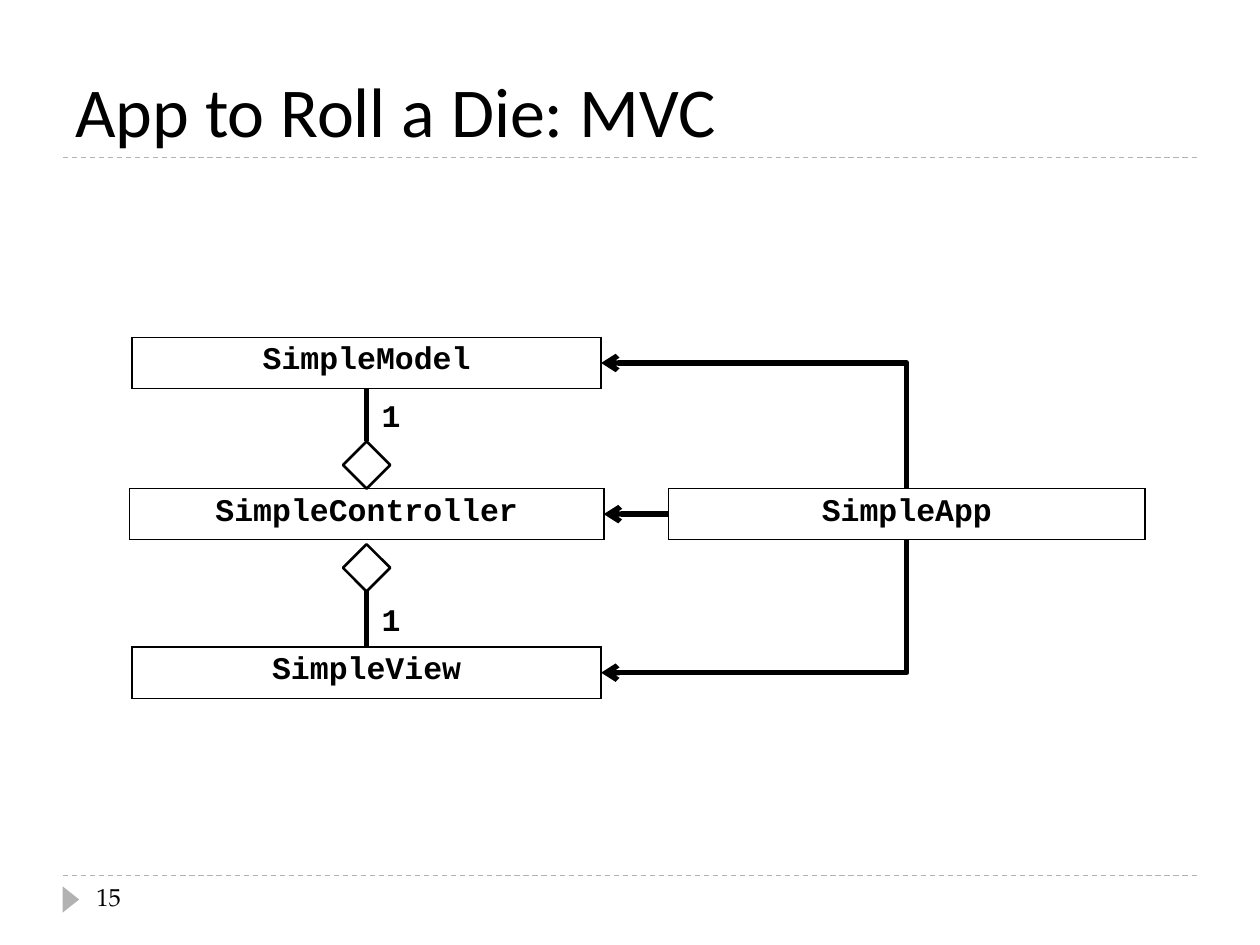
import dataclasses

import pptx
import pptx.dml.color
import pptx.enum.dml
import pptx.enum.shapes
import pptx.enum.text
import pptx.oxml
import pptx.oxml.ns
import pptx.util

Pt = pptx.util.Pt
Shape = pptx.enum.shapes.MSO_SHAPE
Connector = pptx.enum.shapes.MSO_CONNECTOR
Anchor = pptx.enum.text.MSO_ANCHOR
Align = pptx.enum.text.PP_ALIGN
TOP, BOTTOM = 0, 2


@dataclasses.dataclass(frozen=True)
class Theme:
    ink: str = "000000"
    paper: str = "FFFFFF"
    rule: str = "B2B2B2"
    title_font: str = "Calibri"
    code_font: str = "Courier New"
    number_font: str = "TeX Gyre Pagella"
    title_size: float = 40
    code_size: float = 18
    number_size: float = 14
    rule_width: float = 0.75
    border_width: float = 1
    diamond_width: float = 1.5
    link_width: float = 3


def rgb(code):
    return pptx.dml.color.RGBColor.from_string(code)


def add_xml(parent, tag, **attributes):
    child = pptx.oxml.parse_xml(f"<{tag} {pptx.oxml.ns.nsdecls('a')}/>")
    for name, value in attributes.items():
        child.set(name, str(value))
    parent.append(child)
    return child


class Diagram:
    """Holds the theme and the page that the elements are drawn on."""

    def __init__(self, page, theme):
        self.page = page
        self.theme = theme

    def style_text(self, para, font, size, bold=False):
        for span in para.runs:
            span.font.name = font
            span.font.size = Pt(size)
            span.font.bold = bold
            span.font.color.rgb = rgb(self.theme.ink)

    def text(self, words, left, top, width, height, font, size,
             bold=False, anchor=Anchor.TOP, wrap=True):
        box = self.page.shapes.add_textbox(Pt(left), Pt(top), Pt(width), Pt(height))
        frame = box.text_frame
        frame.text = words
        frame.word_wrap = wrap
        frame.vertical_anchor = anchor
        self.style_text(frame.paragraphs[0], font, size, bold)

    def class_box(self, name, left, top, width, height):
        """Draw a class as a table of one bordered cell."""
        frame = self.page.shapes.add_table(1, 1, Pt(left), Pt(top), Pt(width), Pt(height))
        table = frame.table
        table.first_row = table.horz_banding = False
        cell = table.cell(0, 0)
        properties = cell._tc.get_or_add_tcPr()
        for side in ("L", "R", "T", "B"):
            border = add_xml(properties, f"a:ln{side}", w=Pt(self.theme.border_width))
            fill = add_xml(border, "a:solidFill")
            add_xml(fill, "a:srgbClr", val=self.theme.ink)
        cell.fill.solid()
        cell.fill.fore_color.rgb = rgb(self.theme.paper)
        cell.text = name
        para = cell.text_frame.paragraphs[0]
        para.alignment = Align.CENTER
        self.style_text(para, self.theme.code_font, self.theme.code_size, True)

    def shape(self, kind, left, top, width, height, fill, line=None, rotation=0):
        shape = self.page.shapes.add_shape(kind, Pt(left), Pt(top), Pt(width), Pt(height))
        shape.shadow.inherit = False
        shape.rotation = rotation
        shape.fill.solid()
        shape.fill.fore_color.rgb = rgb(fill)
        if line:
            shape.line.color.rgb = rgb(line)
            shape.line.width = Pt(self.theme.diamond_width)
        else:
            shape.line.fill.background()
        return shape

    def connector(self, start, end, color, width, kind=Connector.STRAIGHT):
        link = self.page.shapes.add_connector(kind, *map(Pt, start + end))
        link.line.color.rgb = rgb(color)
        link.line.width = Pt(width)
        add_xml(link._element.spPr, "a:effectLst")
        return link

    def rule(self, top):
        line = self.connector((36, top), (684, top), self.theme.rule, self.theme.rule_width)
        line.line.dash_style = pptx.enum.dml.MSO_LINE.DASH

    def link(self, start, end):
        return self.connector(start, end, self.theme.ink, self.theme.link_width)

    def arrow(self, start, end):
        add_xml(self.link(start, end).line._ln, "a:tailEnd", type="arrow")

    def bent_arrow(self, tip, source):
        """Draw one right-angled bend, level at the tip and upright at the source."""
        link = self.connector(tip, source, self.theme.ink, self.theme.link_width,
                              Connector.ELBOW)
        link._element.spPr.prstGeom.set("prst", "bentConnector2")
        add_xml(link.line._ln, "a:headEnd", type="arrow")


def main():
    deck = pptx.Presentation()
    deck.slide_width, deck.slide_height = Pt(720), Pt(540)
    theme = Theme()
    diagram = Diagram(deck.slides.add_slide(deck.slide_layouts[6]), theme)

    diagram.rule(500.4)
    diagram.rule(90)
    diagram.shape(Shape.ISOSCELES_TRIANGLE, 33, 509.3, 15, 9.4, theme.rule, rotation=90)
    diagram.text("App to Roll a Die: MVC", 36, 12.2, 648, 77.8,
                 theme.title_font, theme.title_size, anchor=Anchor.BOTTOM)
    diagram.text("15", 48, 500.4, 156, 28.8, theme.number_font, theme.number_size)

    axis, row = 209.5, 29.2
    model_top, controller_top, view_top = 192.8, 279.2, 369.8
    part_width, controller_width = 268, 271
    app_left, app_width = 382, 272.4
    for name, top, width in (("SimpleController", controller_top, controller_width),
                             ("SimpleView", view_top, part_width),
                             ("SimpleModel", model_top, part_width)):
        diagram.class_box(name, axis - width / 2, top, width, row)
    diagram.class_box("SimpleApp", app_left, controller_top, app_width, row)

    size = 27
    for diamond_top, site, part_edge, label_top in (
            (controller_top - size, TOP, model_top + row, 222.5),
            (311, BOTTOM, view_top, 339.1)):
        diamond = diagram.shape(Shape.DIAMOND, axis - size / 2, diamond_top, size, size,
                                theme.paper, theme.ink)
        diamond_edge = diamond_top if site == TOP else diamond_top + size
        link = diagram.link((axis, diamond_edge), (axis, part_edge))
        link.begin_connect(diamond, site)
        diagram.text("1", 211, label_top, 25.2, 28.8, theme.code_font, theme.code_size,
                     bold=True, wrap=False)

    app_axis = app_left + app_width / 2
    part_right = axis + part_width / 2
    for part_top, app_edge in ((model_top, controller_top),
                               (view_top, controller_top + row)):
        diagram.bent_arrow((part_right, part_top + row / 2), (app_axis, app_edge))
    middle = controller_top + row / 2
    diagram.arrow((app_left, middle), (axis + controller_width / 2, middle))

    deck.save("out.pptx")


if __name__ == "__main__":
    main()
